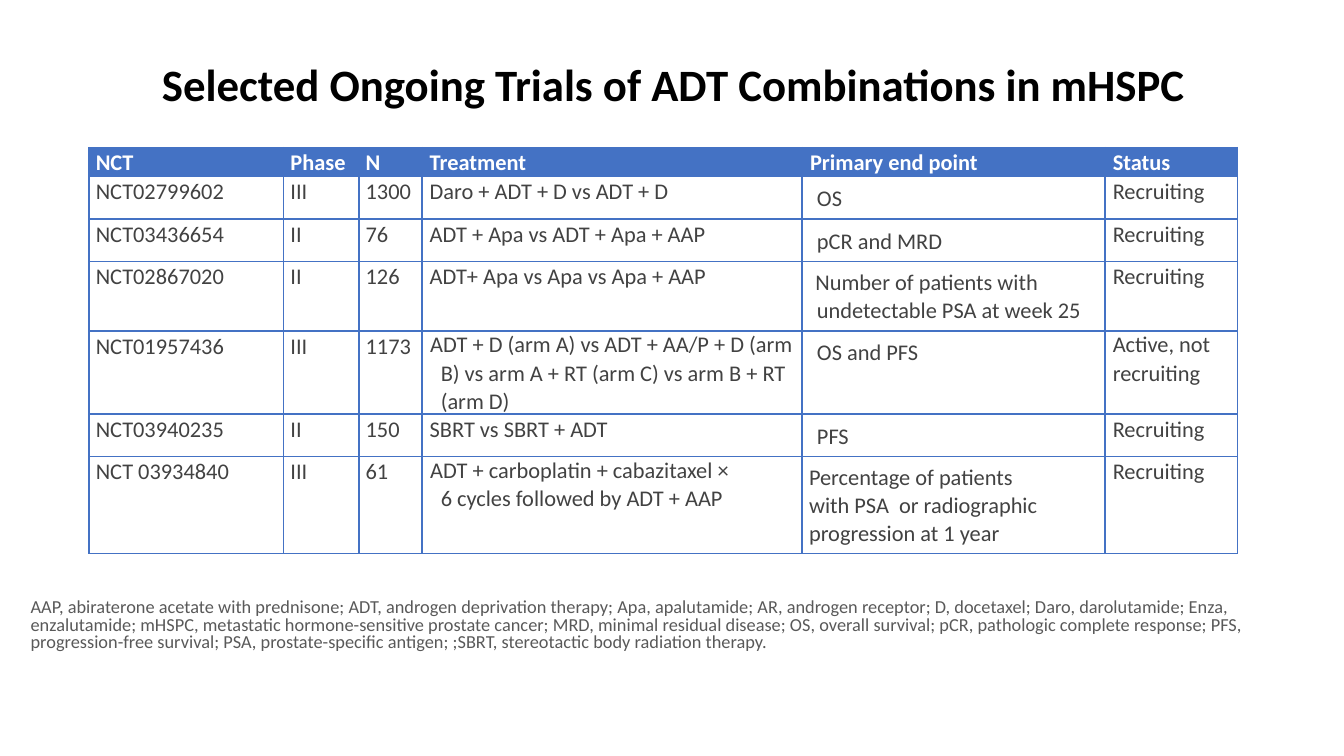
from lxml.etree import SubElement
from pptx import Presentation
from pptx.dml.color import RGBColor
from pptx.enum.text import MSO_ANCHOR, PP_ALIGN
from pptx.oxml.ns import qn
from pptx.util import Cm, Pt

BLUE, WHITE, BLACK, GREY, NOTE = "4472C4", "FFFFFF", "000000", "424242", "595959"
WIDTHS = [3.68, 1.42, 1.19, 7.19, 5.72, 2.51]
HEIGHTS = [0.51, 0.51, 0.51, 1.02, 1.55, 0.51, 1.57]
TREAT, GOAL = 3, 4
HANGING, LAST, TALL = (4, 6), 6, 3

TRIALS = [
    ["NCT", "Phase", "N", "Treatment", "Primary end point", "Status"],
    ["NCT02799602", "III", "1300", "Daro + ADT + D vs ADT + D", "OS", "Recruiting"],
    ["NCT03436654", "II", "76", "ADT + Apa vs ADT + Apa + AAP", "pCR and MRD", "Recruiting"],
    ["NCT02867020", "II", "126", "ADT+ Apa vs Apa vs Apa + AAP",
     "Number of patients with undetectable PSA at week 25", "Recruiting"],
    ["NCT01957436", "III", "1173",
     "ADT + D (arm A) vs ADT + AA/P + D (arm B) vs arm A + RT (arm C) vs arm B + RT (arm D)",
     "OS and PFS", "Active, not recruiting"],
    ["NCT03940235", "II", "150", "SBRT vs SBRT + ADT", "PFS", "Recruiting"],
    ["NCT 03934840", "III", "61",
     "ADT + carboplatin + cabazitaxel × 6 cycles followed by ADT + AAP",
     "Percentage of patients with PSA  or radiographic progression at 1 year", "Recruiting"],
]
ABBREVS = (
    "AAP, abiraterone acetate with prednisone; ADT, androgen deprivation therapy; "
    "Apa, apalutamide; AR, androgen receptor; D, docetaxel; Daro, darolutamide; "
    "Enza, enzalutamide; mHSPC, metastatic hormone-sensitive prostate cancer; "
    "MRD, minimal residual disease; OS, overall survival; pCR, pathologic complete response; "
    "PFS, progression-free survival; PSA, prostate-specific antigen; "
    ";SBRT, stereotactic body radiation therapy."
)


def color(code):
    return RGBColor.from_string(code)


def add_run(para, text, size, code, bold=False):
    run = para.add_run()
    run.text = text
    run.font.name = "Calibri"
    run.font.size = Pt(size)
    run.font.bold = bold
    run.font.color.rgb = color(code)


def add_text(slide, box, text, size, code, spacing, bold=False,
             align=PP_ALIGN.LEFT, anchor=MSO_ANCHOR.TOP):
    frame = slide.shapes.add_textbox(*map(Cm, box)).text_frame
    frame.word_wrap = True
    frame.vertical_anchor = anchor
    para = frame.paragraphs[0]
    para.alignment = align
    para.line_spacing = spacing
    add_run(para, text, size, code, bold)


def set_edges(cell):
    props = cell._tc.get_or_add_tcPr()
    for side in ("lnL", "lnR", "lnT", "lnB"):
        line = SubElement(props, qn(f"a:{side}"), w=str(Pt(1)))
        fill = SubElement(line, qn("a:solidFill"))
        SubElement(fill, qn("a:srgbClr"), val=BLUE)


def set_indent(para, left, first):
    props = para._p.get_or_add_pPr()
    props.set("marL", str(Cm(left)))
    props.set("indent", str(Cm(first)))


def fill_cell(cell, row, col, text):
    head = row == 0
    set_edges(cell)
    if head:
        cell.fill.solid()
        cell.fill.fore_color.rgb = color(BLUE)
    else:
        cell.fill.background()

    inset = Cm(0.13) if col == GOAL and not head else 0
    cell.margin_left = cell.margin_right = inset
    cell.margin_top = cell.margin_bottom = inset
    if row == LAST and col in (TREAT, GOAL):
        cell.margin_right = Cm(1.1)

    para = cell.text_frame.paragraphs[0]
    if col == TREAT and row in HANGING:
        set_indent(para, 0.36, -0.2)
    elif col == GOAL and row == TALL:
        set_indent(para, 0.15, -0.03)
    elif col == GOAL and row == LAST:
        set_indent(para, 0, 0)
    else:
        set_indent(para, 0.13 if col < TREAT else 0.15, 0)
    para.line_spacing = 1.03 if len(text) > 40 or " not " in text else 1.07
    para.space_before = Pt(1.2 if head else 2)
    add_run(para, text, 12, WHITE if head else GREY, head)


def add_trials(slide):
    box = map(Cm, (1.68, 2.79, 21.69, 7.47))
    table = slide.shapes.add_table(len(HEIGHTS), len(WIDTHS), *box).table
    table.horz_banding = False
    for column, width in zip(table.columns, WIDTHS):
        column.width = Cm(width)
    for line, height in zip(table.rows, HEIGHTS):
        line.height = Cm(height)
    for row, trial in enumerate(TRIALS):
        for col, text in enumerate(trial):
            fill_cell(table.cell(row, col), row, col, text)


def main():
    deck = Presentation()
    deck.slide_width, deck.slide_height = Cm(25.4), Cm(14.28)
    slide = deck.slides.add_slide(deck.slide_layouts[6])
    add_text(slide, (0.56, 0.48, 24.33, 2.34),
             "Selected Ongoing Trials of ADT Combinations in mHSPC",
             24, BLACK, 0.9, True, PP_ALIGN.CENTER, MSO_ANCHOR.MIDDLE)
    add_trials(slide)
    add_text(slide, (0.33, 11.2, 24.74, 1.32), ABBREVS, 9.8, NOTE, 0.8)
    deck.save("out.pptx")


if __name__ == "__main__":
    main()
